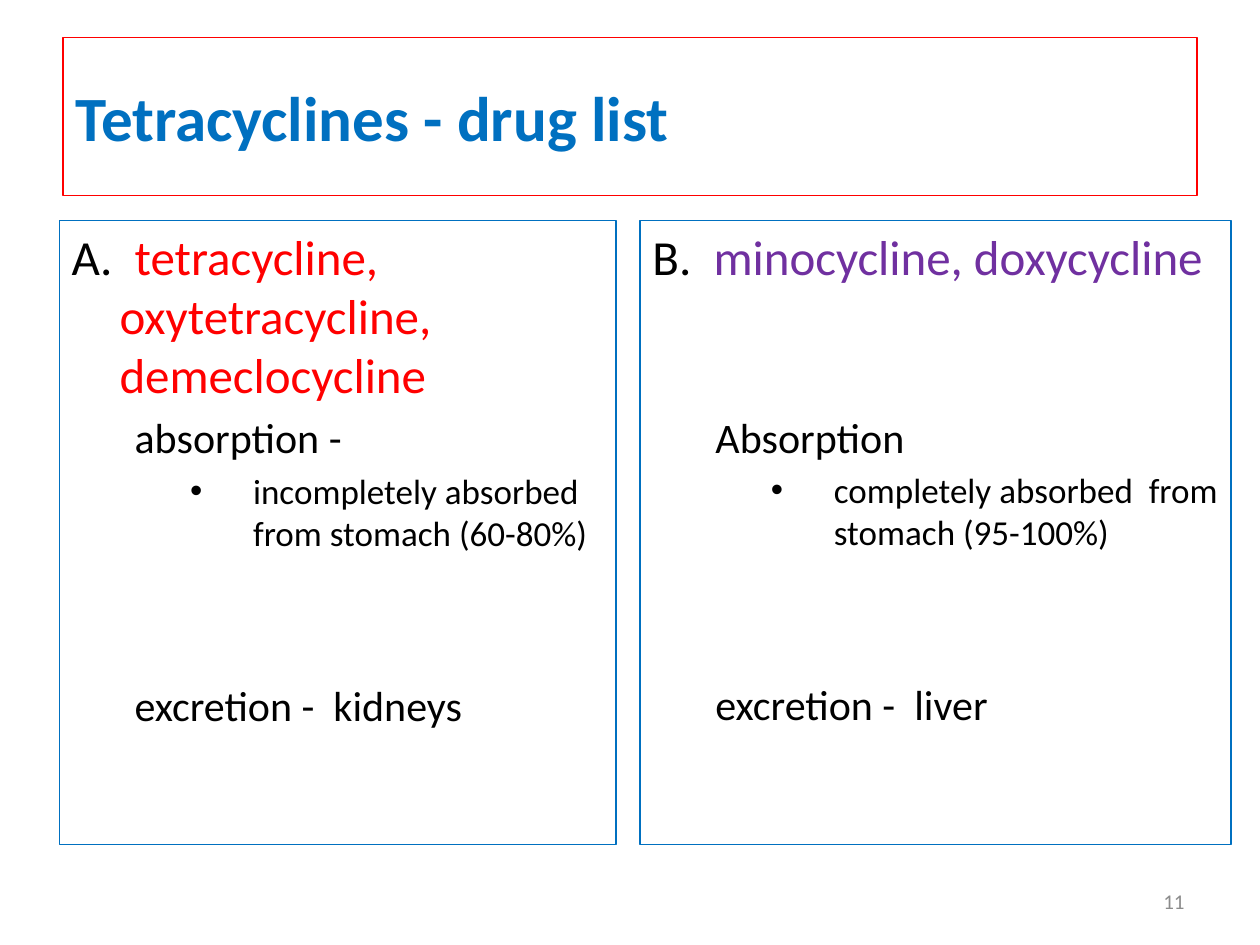
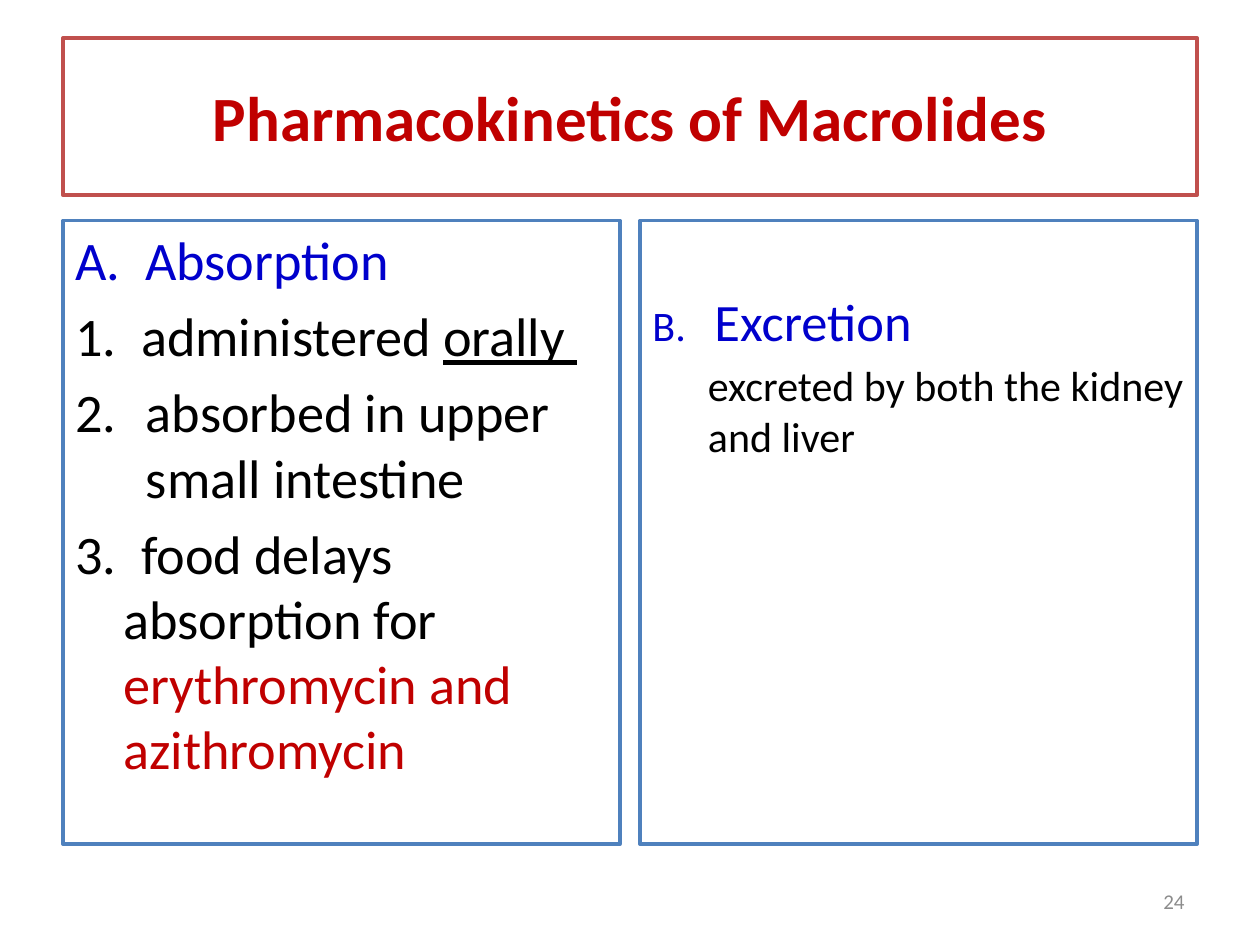
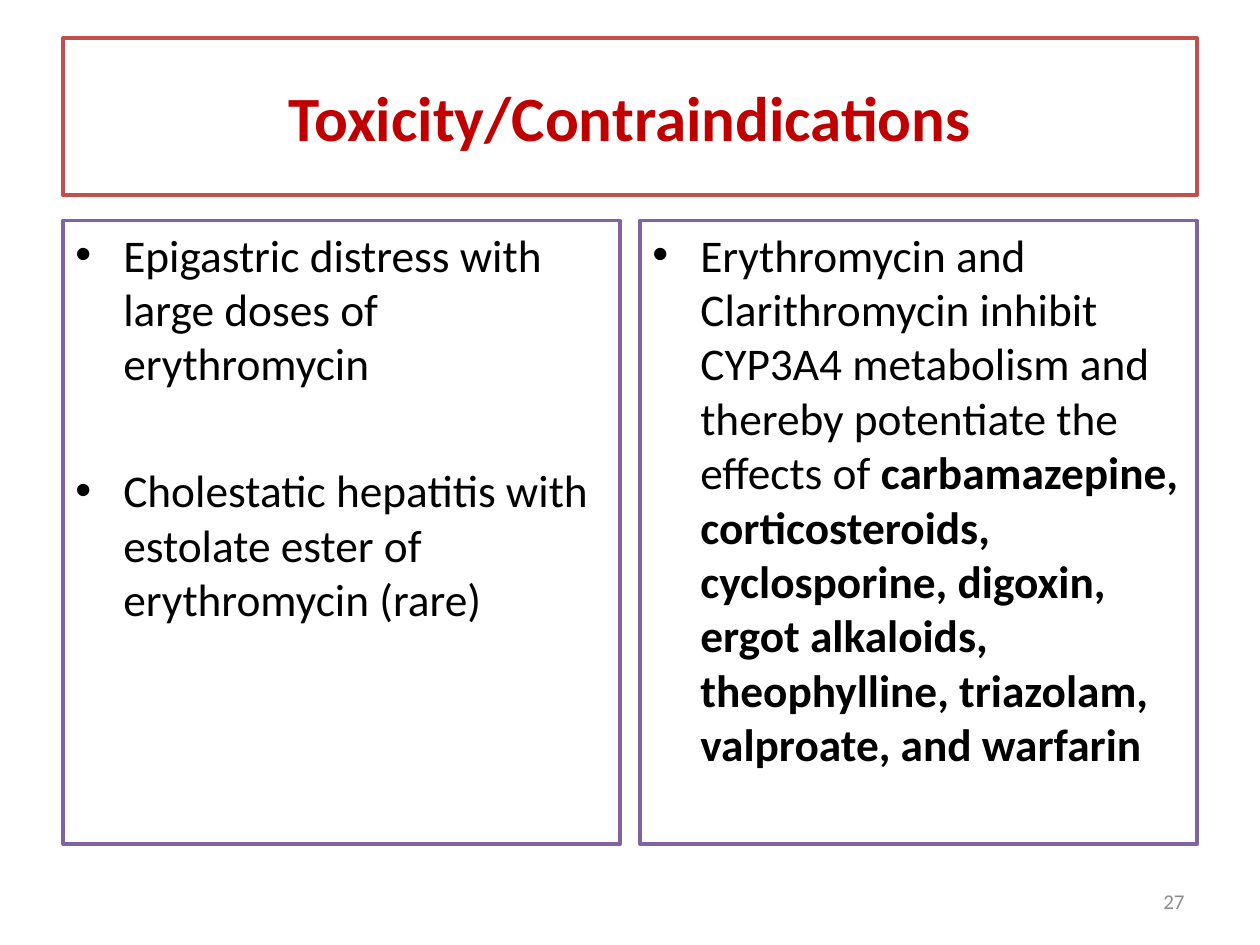
from lxml import etree
from pptx import Presentation
from pptx.dml.color import RGBColor
from pptx.enum.shapes import MSO_SHAPE
from pptx.enum.text import MSO_ANCHOR, PP_ALIGN
from pptx.oxml.ns import qn
from pptx.util import Inches, Pt

RECTANGLE = MSO_SHAPE.RECTANGLE
MIDDLE, TOP = MSO_ANCHOR.MIDDLE, MSO_ANCHOR.TOP
LEFT, CENTER, RIGHT = PP_ALIGN.LEFT, PP_ALIGN.CENTER, PP_ALIGN.RIGHT

FONT = "Calibri"
BLANK_LAYOUT = 6
WIDTH, HEIGHT = 10, 7.5
MARGIN = 0.05 * WIDTH
GUTTER = 0.16
COLUMN = (WIDTH - 2 * MARGIN - GUTTER) / 2
RIGHT_COLUMN = MARGIN + COLUMN + GUTTER
TITLE_BOX = (MARGIN, 0.04 * HEIGHT, WIDTH - 2 * MARGIN, HEIGHT / 6)
PANEL_TOP, PANEL_HEIGHT = 1.75, 0.66 * HEIGHT
NUMBER_BOX = (7.17, 6.95, 2.33, 0.4)

BLACK, WHITE, GREY = "000000", "FFFFFF", "8C8C8C"
RED, DARK_RED, BRICK = "FF0000", "C00000", "C0504D"
BLUE, STEEL, NAVY = "0070C0", "4F81BD", "0000CC"
VIOLET, PURPLE = "7030A0", "8064A2"

HANGING = (0.38, -0.38)
SUBHEAD = (0.5, 0)
DETAIL = (1.44, -0.5)
DISC = ("a:buChar", {"char": "•"})


def color(value):
    return RGBColor.from_string(value)


def number_from(start):
    return ("a:buAutoNum", {"type": "arabicPeriod", "startAt": str(start)})


def run(text, size, ink=BLACK, bold=False, underline=False):
    return text, size, ink, bold, underline


def item(*runs, indent=(0, 0), bullet=None, gap_lines=0, align=LEFT):
    return runs, indent, bullet, gap_lines, align


def fill_paragraph(paragraph, content):
    runs, (left, first), bullet, gap_lines, align = content
    paragraph.alignment = align
    largest = max(size for _, size, *_ in runs)
    paragraph.space_before = Pt(round(largest * (0.2 + 1.4 * gap_lines), 1))
    properties = paragraph._p.get_or_add_pPr()
    properties.set("marL", str(Inches(left)))
    properties.set("indent", str(Inches(first)))
    if bullet:
        tag, attributes = bullet
        if bullet == DISC:
            etree.SubElement(properties, qn("a:buFont"), typeface="Arial")
        etree.SubElement(properties, qn(tag), attributes)
    for text, size, ink, bold, underline in runs:
        text_run = paragraph.add_run()
        text_run.text = text
        font = text_run.font
        font.name, font.size = FONT, Pt(size)
        font.bold, font.underline = bold, underline
        font.color.rgb = color(ink)


def write(shape, items, anchor):
    frame = shape.text_frame
    frame.word_wrap = True
    frame.vertical_anchor = anchor
    for index, content in enumerate(items):
        paragraph = frame.add_paragraph() if index else frame.paragraphs[0]
        fill_paragraph(paragraph, content)


def add_box(slide, box, outline, weight, fill, items, anchor=TOP):
    shape = slide.shapes.add_shape(RECTANGLE, *map(Inches, box))
    shape.shadow.inherit = False
    if fill:
        shape.fill.solid()
        shape.fill.fore_color.rgb = color(fill)
    else:
        shape.fill.background()
    shape.line.color.rgb = color(outline)
    shape.line.width = Pt(weight)
    write(shape, items, anchor)
    return shape


def add_title(slide, text, ink=DARK_RED, outline=BRICK, weight=2, fill=WHITE, align=CENTER):
    title = item(run(text, 36, ink, bold=True), align=align)
    add_box(slide, TITLE_BOX, outline, weight, fill, [title], MIDDLE)


def add_panel(slide, left, items, outline, weight=2, fill=WHITE, width=COLUMN):
    box = (left, PANEL_TOP, width, PANEL_HEIGHT)
    return add_box(slide, box, outline, weight, fill, items)


def add_slide(presentation, number):
    slide = presentation.slides.add_slide(presentation.slide_layouts[BLANK_LAYOUT])
    slide.background.fill.solid()
    slide.background.fill.fore_color.rgb = color(WHITE)
    box = slide.shapes.add_textbox(*map(Inches, NUMBER_BOX))
    write(box, [item(run(number, 12, GREY), align=RIGHT)], MIDDLE)
    return slide


def drug_group(heading, absorption, amount, excretion, absorption_gap=0):
    return [
        item(*heading, indent=HANGING),
        item(run(absorption, 24), indent=SUBHEAD, gap_lines=absorption_gap),
        item(run(amount, 20), indent=DETAIL, bullet=DISC),
        item(run(excretion, 24), indent=SUBHEAD, gap_lines=2),
    ]


def build_drug_list(presentation):
    slide = add_slide(presentation, "11")
    add_title(slide, "Tetracyclines - drug list", BLUE, RED, 0.75, None, LEFT)
    group_a = drug_group(
        [run("A.", 28), run("  tetracycline, oxytetracycline, demeclocycline", 28, RED)],
        "absorption -",
        "incompletely absorbed  from stomach (60-80%)",
        "excretion -  kidneys",
    )
    group_b = drug_group(
        [run("B.  ", 28), run("minocycline, doxycycline", 28, VIOLET)],
        "Absorption",
        "completely absorbed  from stomach (95-100%)",
        "excretion -  liver",
        absorption_gap=2,
    )
    add_panel(slide, 0.47, group_a, BLUE, 0.75, None)
    add_panel(slide, RIGHT_COLUMN, group_b, BLUE, 0.75, None, 4.69)


def build_pharmacokinetics(presentation):
    slide = add_slide(presentation, "24")
    add_title(slide, "Pharmacokinetics of Macrolides")
    absorption = [
        item(run("A.  Absorption", 31, NAVY), indent=HANGING),
        item(run("1.  administered ", 31), run("orally ", 31, underline=True), indent=HANGING),
        item(run("absorbed in upper small intestine", 31),
             indent=(0.56, -0.56), bullet=number_from(2)),
        item(run("3.  food delays absorption for ", 31),
             run("erythromycin and azithromycin", 31, DARK_RED), indent=HANGING),
    ]
    excretion = [
        item(run("B.   ", 24, NAVY), run("Excretion", 30, NAVY)),
        item(run("excreted by both the kidney and liver", 24), indent=(0.44, 0)),
    ]
    add_panel(slide, MARGIN, absorption, STEEL)
    panel = add_panel(slide, RIGHT_COLUMN, excretion, STEEL)
    panel.text_frame.margin_top = Inches(0.54)


def build_toxicity(presentation):
    slide = add_slide(presentation, "27")
    add_title(slide, "Toxicity/Contraindications")
    size = 25.9
    effects = [
        item(run("Epigastric distress with large doses of erythromycin", size),
             indent=HANGING, bullet=DISC),
        item(run("Cholestatic hepatitis with estolate ester of erythromycin (rare)", size),
             indent=HANGING, bullet=DISC, gap_lines=1),
    ]
    interactions = [
        item(run("Erythromycin and Clarithromycin inhibit CYP3A4 metabolism "
                 "and thereby potentiate the effects of ", size),
             run("carbamazepine, corticosteroids, cyclosporine, digoxin, ergot alkaloids, "
                 "theophylline, triazolam, valproate, and warfarin", size, bold=True),
             indent=HANGING, bullet=DISC),
    ]
    add_panel(slide, MARGIN, effects, PURPLE)
    add_panel(slide, RIGHT_COLUMN, interactions, PURPLE)


def main():
    presentation = Presentation()
    presentation.slide_width = Inches(WIDTH)
    presentation.slide_height = Inches(HEIGHT)
    build_drug_list(presentation)
    build_pharmacokinetics(presentation)
    build_toxicity(presentation)
    presentation.save("out.pptx")


if __name__ == "__main__":
    main()
